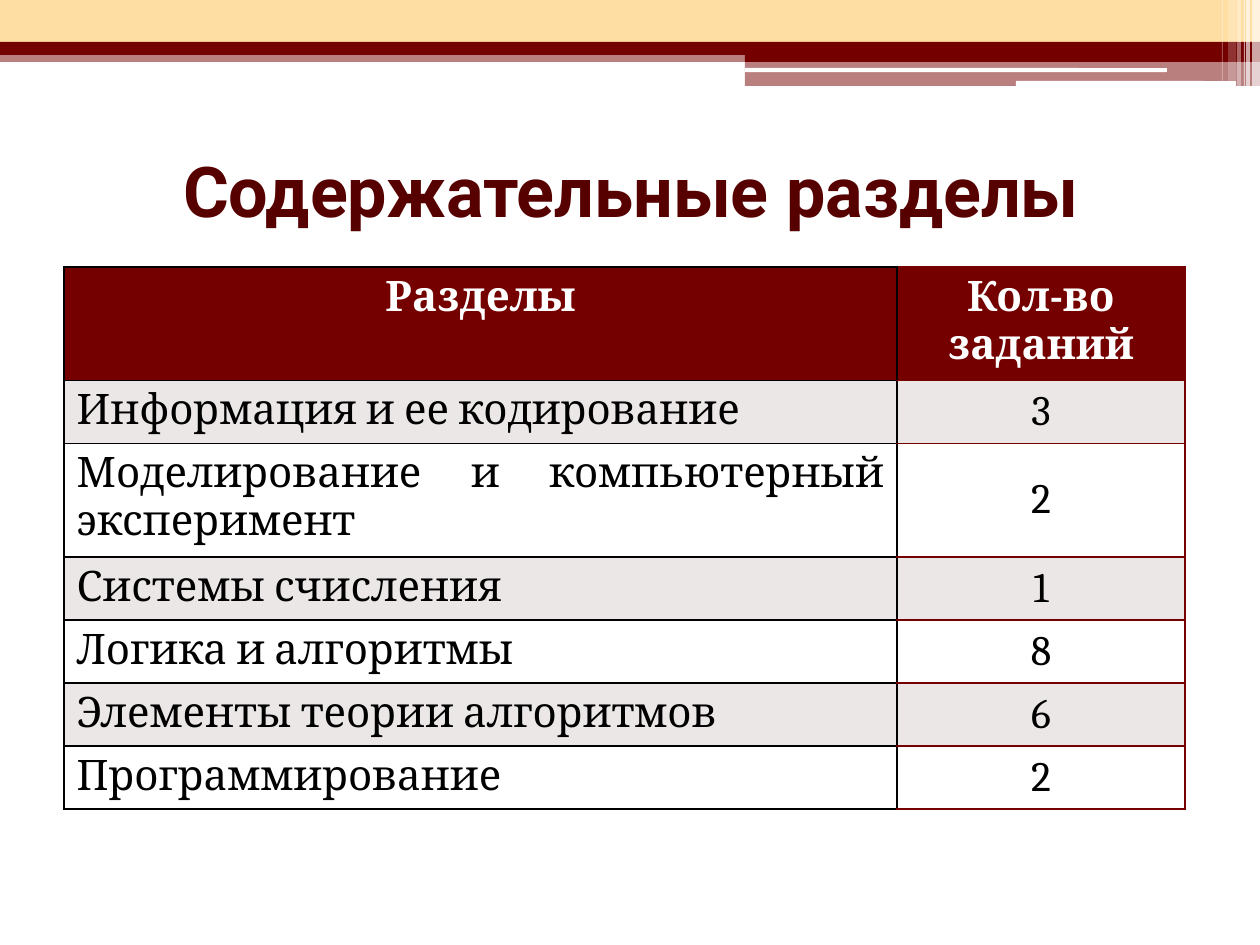
from pptx import Presentation
from pptx.dml.color import RGBColor
from pptx.enum.shapes import MSO_SHAPE as Kind
from pptx.enum.text import MSO_ANCHOR as Anchor, PP_ALIGN as Align
from pptx.oxml.ns import qn
from pptx.util import Pt
from lxml.etree import SubElement as Sub

HUES = {"dark": "740000", "sand": "FFDEA4", "white": "FFFFFF",
        "title": "570000", "black": "000000", "band": "EBE7E7"}
ROWS = [("Разделы", "Кол-во\nзаданий"),
        ("Информация и ее кодирование", "3"),
        ("Моделирование и компьютерный эксперимент", "2"),
        ("Системы счисления", "1"),
        ("Логика и алгоритмы", "8"),
        ("Элементы теории алгоритмов", "6"),
        ("Программирование", "2")]


def px(count):
    return round(count * 914400 / 126)


def hue(name):
    return RGBColor.from_string(HUES[name])


def style(frame, align, face, size, color, bold):
    for para in frame.paragraphs:
        para.alignment = align
        for run in para.runs:
            font = run.font
            font.name, font.size, font.bold = face, Pt(size), bold
            font.color.rgb = hue(color)


def bar(slide, box, color, alpha=100, kind=Kind.RECTANGLE):
    shape = slide.shapes.add_shape(kind, *map(px, box))
    shape.shadow.inherit = False
    shape.line.fill.background()
    shape.fill.solid()
    shape.fill.fore_color.rgb = hue(color)
    if alpha < 100:
        tint = shape.fill._xPr.find(".//" + qn("a:srgbClr"))
        Sub(tint, qn("a:alpha"), val=str(alpha * 1000))


def banner(slide, box):
    left, top, width, height = box
    mid = left + 745
    half = width - 745
    bar(slide, (left, top + 50, width, 12), "dark", 50)
    bar(slide, (left, top, width, 42), "sand")
    bar(slide, (left, top + 42, width, 13), "dark")
    bar(slide, (mid, top + 49, half, 13), "dark")
    bar(slide, (mid, top + 61, half, 25), "dark", 50)
    for x, y, w, h in ((0, 68, 422, 4), (271, 81, 220, 5)):
        bar(slide, (mid + x, top + y, w, h), "white", kind=Kind.ROUNDED_RECTANGLE)
    for x, w, cut, alpha in ((8, 8, 0, 65), (14, 4, 0, 65), (16, 1, 0, 60),
                             (23, 4, 0, 40), (32, 8, 5, 20), (38, 1, 5, 30)):
        bar(slide, (left + width - x, top, w, height - cut), "white", alpha)


def title(slide, box):
    frame = slide.shapes.add_textbox(*map(px, box)).text_frame
    frame.word_wrap = True
    frame.vertical_anchor = Anchor.MIDDLE
    frame.text = "Содержательные разделы"
    style(frame, Align.CENTER, "Roboto", 40, "title", True)


def border(cell, colors):
    props = cell._tc.get_or_add_tcPr()
    for side, color in zip("LRTB", colors):
        line = Sub(props, qn("a:ln" + side), w=str(Pt(1)))
        Sub(Sub(line, qn("a:solidFill")), qn("a:srgbClr"), val=HUES[color])


def grid(slide, box):
    shape = slide.shapes.add_table(len(ROWS), 2, *map(px, box))
    table = shape.table
    for col, width in zip(table.columns, (833, box[2] - 833)):
        col.width = px(width)
    for r, texts in enumerate(ROWS):
        table.rows[r].height = px(52)
        head = r == 0
        fill = "dark" if head else "band" if r % 2 else "white"
        for c, text in enumerate(texts):
            cell = table.cell(r, c)
            border(cell, ["black"] + ["dark" if c else "black"] * 3)
            cell.fill.solid()
            cell.fill.fore_color.rgb = hue(fill)
            cell.text_frame.text = text
            if c and not head:
                cell.vertical_anchor = Anchor.MIDDLE
            align = Align.CENTER if head or c else Align.JUSTIFY
            style(cell.text_frame, align, "Cambria", 24,
                  "white" if head else "black", head)
    shape.height = px(box[3])


def main():
    deck = Presentation()
    deck.slide_width, deck.slide_height = px(1260), px(945)
    slide = deck.slides.add_slide(deck.slide_layouts[6])
    banner(slide, (0, 0, 1260, 86))
    title(slide, (64, 116, 1134, 147))
    grid(slide, (64, 267, 1121, 542))
    deck.save("out.pptx")


if __name__ == "__main__":
    main()
